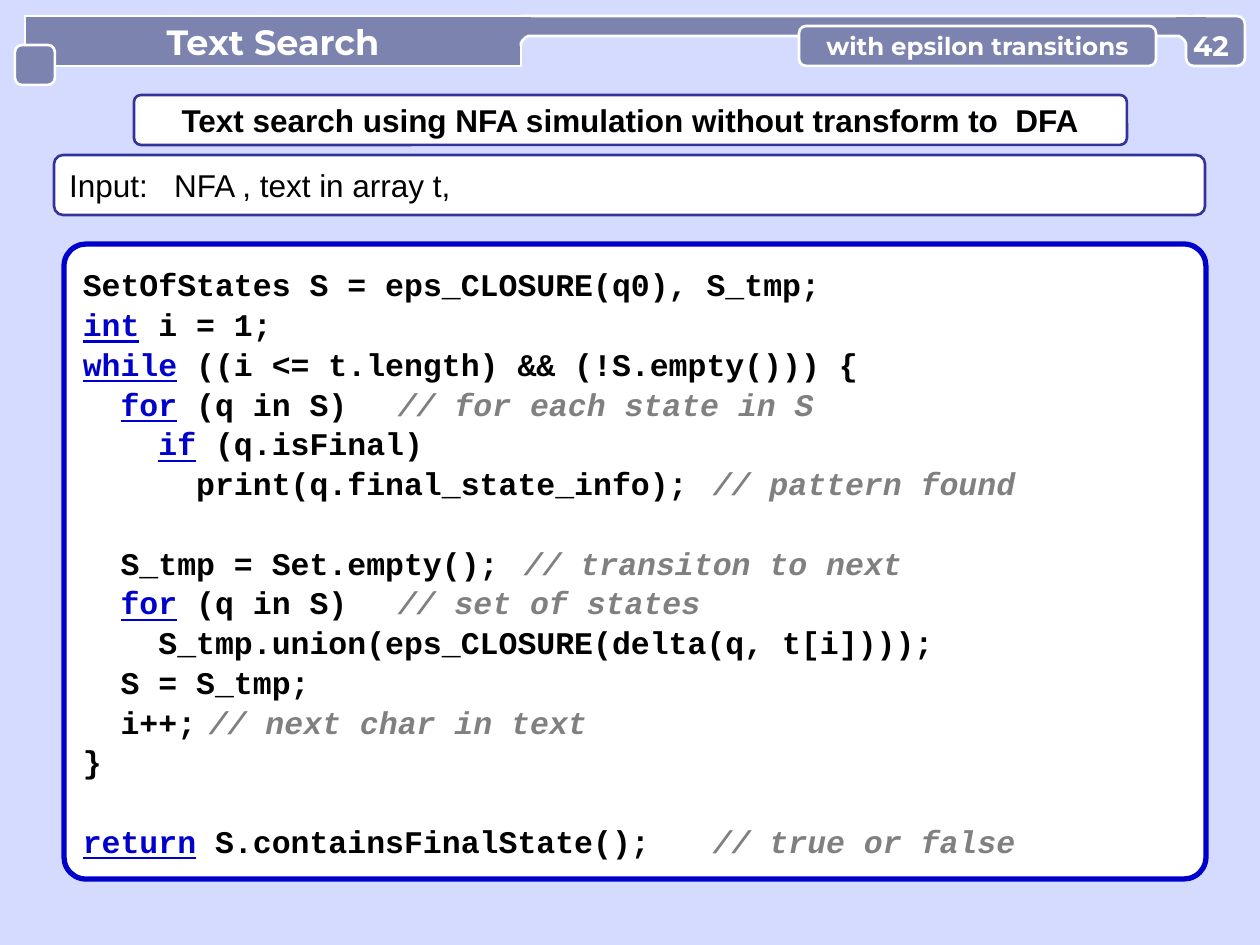
from dataclasses import dataclass
from math import cos, pi, sin

from lxml.etree import SubElement
from pptx import Presentation
from pptx.dml.color import RGBColor as RGB
from pptx.enum.shapes import MSO_CONNECTOR as LINK, MSO_SHAPE as KIND
from pptx.enum.text import MSO_ANCHOR as ANCHOR, MSO_AUTO_SIZE as FIT, PP_ALIGN as ALIGN
from pptx.oxml.ns import qn
from pptx.util import Inches, Pt

SCALE = Inches(1) / 126


@dataclass(frozen=True)
class Theme:
    back: RGB = RGB.from_string("D5DAFF")
    bar: RGB = RGB.from_string("7D83AF")
    white: RGB = RGB.from_string("FFFFFF")
    black: RGB = RGB.from_string("000000")
    key: RGB = RGB.from_string("0000CC")
    note: RGB = RGB.from_string("808080")
    frame: RGB = RGB.from_string("333399")
    head: str = "Montserrat"
    body: str = "Arial"
    mono: str = "Courier New"
    title: int = 20
    text: int = 18
    number: int = 16
    topic: int = 14
    thin: float = 1.5
    thick: float = 3
    row: float = 22.7


THEME = Theme()
KEYS = {"int", "while", "for", "if", "return"}
CHAR = 0.6 * THEME.text  # width of one fixed-pitch letter, in points
NOTE_COL = 35

# indent level, code, comment, blank rows above
CODE = [
    (0, "SetOfStates S = eps_CLOSURE(q0), S_tmp;", "", 0),
    (0, "int i = 1;", "", 0),
    (0, "while ((i <= t.length) && (!S.empty())) {", "", 0),
    (1, "for (q in S)", "// for each state in S", 0),
    (2, "if (q.isFinal)", "", 0),
    (3, "print(q.final_state_info);", "// pattern found", 0),
    (1, "S_tmp = Set.empty();", "// transiton to next", 1),
    (1, "for (q in S)", "// set of states", 0),
    (2, "S_tmp.union(eps_CLOSURE(delta(q, t[i])));", "", 0),
    (1, "S = S_tmp;", "", 0),
    (1, "i++;", "// next char in text", 0),
    (0, "}", "", 0),
    (0, "return S.containsFinalState();", "// true or false", 1),
]


def px(*sizes):
    return [round(size * SCALE) for size in sizes]


def paint(shape, fill, line=None, width=THEME.thin):
    shape.shadow.inherit = False
    shape.fill.solid()
    shape.fill.fore_color.rgb = fill
    if line is None:
        shape.line.fill.background()
    else:
        shape.line.color.rgb = line
        shape.line.width = Pt(width)


def panel(slide, box, radius, fill, line, width=THEME.thin):
    shape = slide.shapes.add_shape(KIND.ROUNDED_RECTANGLE, *px(*box))
    shape.adjustments[0] = radius / min(box[2:])
    paint(shape, fill, line, width)
    return shape


def style(para, face, size, color, bold=True, align=ALIGN.CENTER):
    para.alignment = align
    font = para.font
    font.name, font.size, font.bold = face, Pt(size), bold
    font.color.rgb = color


def write(shape, text, *look, **more):
    frame = shape.text_frame
    frame.word_wrap = True
    frame.vertical_anchor = ANCHOR.MIDDLE
    para = frame.paragraphs[0]
    para.text = text
    style(para, *look, **more)
    return para


def add_tab(para, points):
    props = para._p.get_or_add_pPr()
    tabs = SubElement(props, qn("a:tabLst"))
    SubElement(tabs, qn("a:tab"), pos=str(Pt(points)), algn="l")
    font = props.find(qn("a:defRPr"))
    if font is not None:
        props.append(font)  # the schema puts tabs before the font


def title_tab(slide, box, radius):
    """Turn the title placeholder into a rounded tab."""
    title = slide.shapes.title
    title.left, title.top, title.width, title.height = px(*box)
    shape = title._element.spPr
    geom = SubElement(shape, qn("a:prstGeom"), prst="roundRect")
    guides = SubElement(geom, qn("a:avLst"))
    ratio = round(100000 * radius / min(box[2:]))
    SubElement(guides, qn("a:gd"), name="adj", fmla=f"val {ratio}")
    title.fill.solid()
    title.fill.fore_color.rgb = THEME.bar
    title.line.color.rgb = THEME.white
    title.line.width = Pt(THEME.thin)
    write(title, "Text Search", THEME.head, THEME.title, THEME.white)
    title.text_frame.auto_size = FIT.NONE


def joint(slide, box, side):
    """Blend the bar into a tab; side is -1 for a tab on the left, 1 on the right."""
    left, top, width, height = box
    paint(slide.shapes.add_shape(KIND.RECTANGLE, *px(*box)), THEME.bar)
    edge = slide.shapes.add_connector(LINK.STRAIGHT, *px(left, top, left + width, top))
    edge.line.color.rgb = THEME.white
    edge.line.width = Pt(THEME.thin)
    SubElement(edge._element.spPr, qn("a:effectLst"))

    radius = 10
    hub = (left + width if side < 0 else left, top + height)
    turns = [pi / 2 * step / 12 for step in range(13)]
    curve = [(hub[0] + side * radius * sin(turn), hub[1] - radius * cos(turn))
             for turn in turns]
    for closed in (True, False):
        path = slide.shapes.build_freeform(*curve[0], scale=SCALE)
        path.add_line_segments(curve[1:] + ([hub] if closed else []), close=closed)
        shape = path.convert_to_shape()
        paint(shape, THEME.back, None if closed else THEME.white)
        if not closed:
            shape.fill.background()


def header(slide, box):
    left, top, width, height = box
    right = left + width
    look = THEME.bar, THEME.white
    title_tab(slide, (left, top, 496, height), 9)
    panel(slide, (left + 487, top, 684, 20), 10, *look)
    joint(slide, (left + 476, top, 30, 30), -1)
    panel(slide, (left - 10, top + 29, 40, 40), 7, *look)
    panel(slide, (right - 59, top, 59, height), 8, *look)
    joint(slide, (right - 69, top, 30, 30), 1)
    topic = panel(slide, (right - 446, top + 10, 357, 40), 7, *look)
    write(topic, "with epsilon transitions", THEME.head, THEME.topic, THEME.white)
    page = slide.shapes.add_textbox(*px(right - 59, top + 12, 50, 34))
    write(page, "42", THEME.head, THEME.number, THEME.white)
    frame = page.text_frame
    frame.margin_left = frame.margin_right = frame.margin_top = frame.margin_bottom = 0


def heading(slide, box):
    shape = panel(slide, box, 7, THEME.white, THEME.frame)
    write(shape, "Text search using NFA simulation without transform to  DFA",
          THEME.body, THEME.text, THEME.black)


def input_box(slide, box):
    shape = panel(slide, box, 9, THEME.white, THEME.frame)
    para = write(shape, "Input:\tNFA , text in array t,", THEME.body, THEME.text,
                 THEME.black, bold=False, align=ALIGN.LEFT)
    add_tab(para, 60)


def add_run(para, text, color):
    run = para.add_run()
    run.text = text
    run.font.color.rgb = color
    return run


def code_row(para, level, code, note, gap):
    style(para, THEME.mono, THEME.text, THEME.black, align=ALIGN.LEFT)
    para.line_spacing = Pt(THEME.row)
    para.space_before = Pt(gap * THEME.row)
    props = para._p.get_or_add_pPr()
    props.set("marL", "0")
    props.set("indent", str(Pt(2 * level * CHAR)))
    word, space, rest = code.partition(" ")
    if word in KEYS:
        add_run(para, word, THEME.key).font.underline = True
        code = space + rest
    add_run(para, code, THEME.black)
    if note:
        add_tab(para, NOTE_COL * CHAR)
        add_run(para, "\t" + note, THEME.note).font.italic = True


def code_box(slide, box):
    shape = panel(slide, box, 22, THEME.white, THEME.key, THEME.thick)
    frame = shape.text_frame
    frame.word_wrap = True
    frame.vertical_anchor = ANCHOR.MIDDLE
    for index, row in enumerate(CODE):
        code_row(frame.add_paragraph() if index else frame.paragraphs[0], *row)


def main():
    deck = Presentation()
    deck.slide_width, deck.slide_height = px(1260, 945)
    slide = deck.slides.add_slide(deck.slide_layouts[5])
    slide.background.fill.solid()
    slide.background.fill.fore_color.rgb = THEME.back
    code_box(slide, (64, 244, 1142, 635))
    input_box(slide, (54, 155, 1151, 60))
    heading(slide, (134, 95, 993, 50))
    header(slide, (25, 16, 1220, 50))
    deck.save("out.pptx")


if __name__ == "__main__":
    main()
